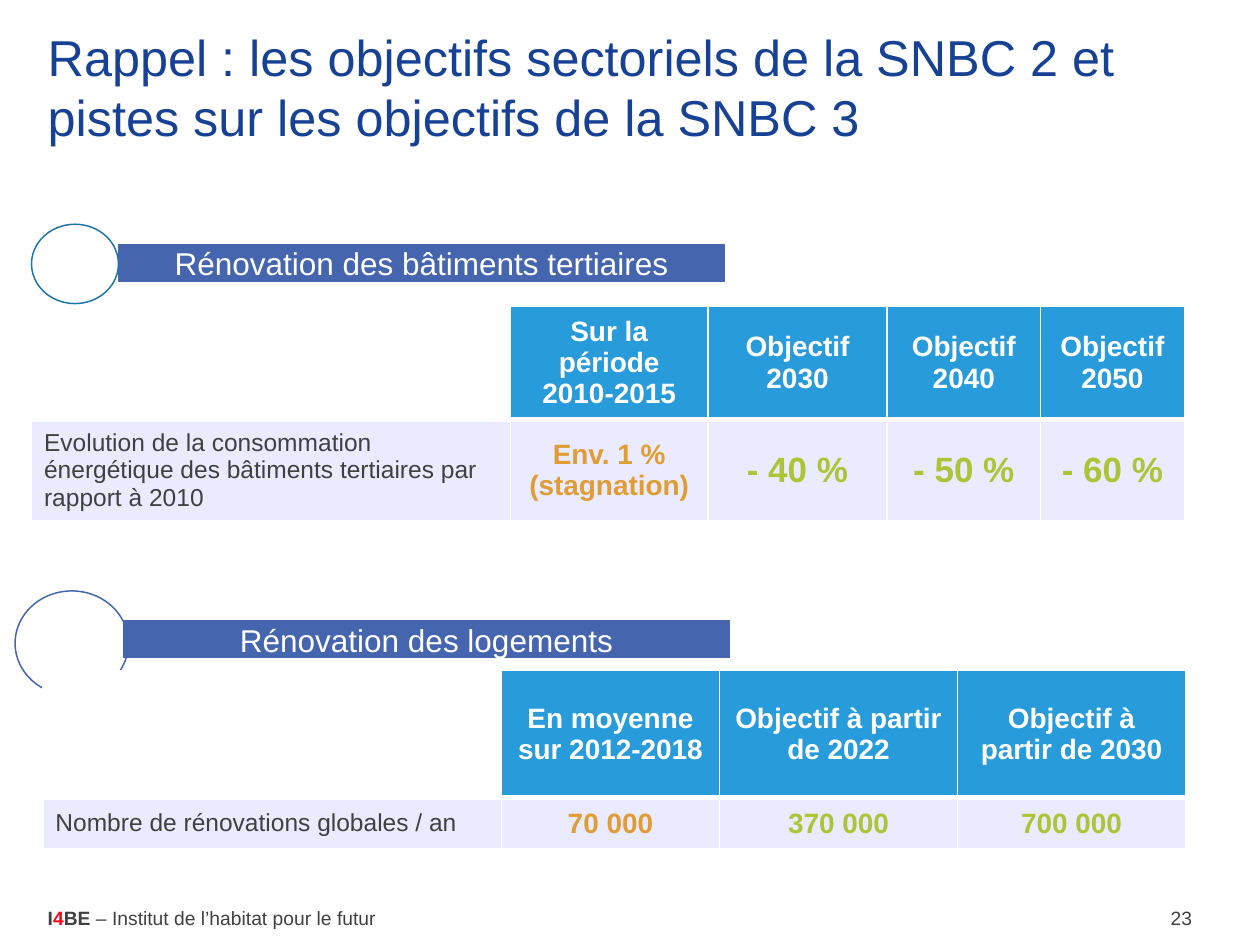
import pptx
import pptx.util
import pptx.dml.color
import pptx.enum.shapes
import pptx.enum.text
import pptx.oxml
from lxml import etree

Inches, Pt = pptx.util.Inches, pptx.util.Pt
ALIGN = pptx.enum.text.PP_ALIGN
ANCHOR = pptx.enum.text.MSO_ANCHOR
SHAPE = pptx.enum.shapes.MSO_SHAPE

# Content
TITLE = "Rappel : les objectifs sectoriels de la SNBC 2 et pistes sur les objectifs de la SNBC 3"
FOOTER = [("I", "404041", True), ("4", "EE0612", True), ("BE ", "404041", True),
          ("– Institut de l’habitat pour le futur", "404041", False)]
PAGE = "23"
GREEN, ORANGE, GREY, WHITE, BLUE = "ACC435", "E09C35", "404041", "FFFFFF", "4565AF"

# Values: text, colour, size
SECTIONS = [
    dict(heading="Rénovation des bâtiments tertiaires", bar=(0.94, 1.94),
         circle=(0.25, 1.78, 0.69, 0.63), outline="1C76A6",
         table=(0.25, 2.43), cols=[3.8, 1.57, 1.42, 1.22, 1.14], rows=[0.84, 0.75],
         header=["Sur la période 2010-2015", "Objectif 2030", "Objectif 2040", "Objectif 2050"],
         label="Evolution de la consommation énergétique des bâtiments tertiaires par rapport à 2010",
         values=[("Env. 1 %\n(stagnation)", ORANGE, 16), ("- 40 %", GREEN, 20),
                 ("- 50 %", GREEN, 20), ("- 60 %", GREEN, 20)]),
    dict(heading="Rénovation des logements", bar=(0.98, 4.93),
         circle=(0.12, 4.69, 0.9, 0.83), outline=BLUE,
         table=(0.34, 5.32), cols=[3.64, 1.73, 1.89, 1.81], rows=[1.01, 0.41],
         header=["En moyenne sur 2012-2018", "Objectif à partir de 2022", "Objectif à partir de 2030"],
         label="Nombre de rénovations globales / an",
         values=[("70 000", ORANGE, 16), ("370 000", GREEN, 16), ("700 000", GREEN, 16)]),
]


def rgb(value):
    return pptx.dml.color.RGBColor.from_string(value)


def write(tf, text, size, color, align=ALIGN.LEFT, bold=False):
    tf.word_wrap = True
    tf.text = text
    for p in tf.paragraphs:
        p.alignment = align
        p.font.name, p.font.size, p.font.bold = "Arial", Pt(size), bold
        p.font.color.rgb = rgb(color)


def text_box(slide, box, anchor=ANCHOR.TOP):
    tf = slide.shapes.add_textbox(*map(Inches, box)).text_frame
    tf.vertical_anchor = anchor
    return tf


def add_shape(slide, kind, box, outline, fill=None):
    sp = slide.shapes.add_shape(kind, *map(Inches, box))
    sp.shadow.inherit = False
    if fill:
        sp.fill.solid()
        sp.fill.fore_color.rgb = rgb(fill)
    else:
        sp.fill.background()
    sp.line.color.rgb = rgb(outline)
    sp.line.width = Pt(0.85)
    return sp


def style_cell(cell, fill, bottom_width, alpha=None):
    cell.vertical_anchor = ANCHOR.MIDDLE
    cell.fill.solid()
    cell.fill.fore_color.rgb = rgb(fill)
    tc_pr = cell._tc.get_or_add_tcPr()
    ns = pptx.oxml.ns.qn
    if alpha:
        color = tc_pr.find(".//" + ns("a:srgbClr"))
        etree.SubElement(color, ns("a:alpha"), val=str(alpha * 1000))
    # Borders come before the fill
    for i, (side, width) in enumerate(zip("LRTB", (1, 1, 1, bottom_width))):
        ln = etree.Element(ns("a:ln" + side), w=str(Pt(width)))
        solid = etree.SubElement(ln, ns("a:solidFill"))
        etree.SubElement(solid, ns("a:srgbClr"), val=WHITE)
        tc_pr.insert(i, ln)


def add_section(slide, sec):
    # Heading bar and circle
    bar = add_shape(slide, SHAPE.RECTANGLE, (*sec["bar"], 4.81, 0.29), BLUE, BLUE)
    bar.text_frame.vertical_anchor = ANCHOR.MIDDLE
    write(bar.text_frame, sec["heading"], 18, WHITE, ALIGN.CENTER)
    add_shape(slide, SHAPE.OVAL, sec["circle"], sec["outline"])

    # Table
    cols, rows = sec["cols"], sec["rows"]
    size = (sum(cols), sum(rows))
    table = slide.shapes.add_table(len(rows), len(cols), *map(Inches, sec["table"] + size)).table
    for col, width in zip(table.columns, cols):
        col.width = Inches(width)
    for row, height in zip(table.rows, rows):
        row.height = Inches(height)
    for c in range(len(cols)):
        style_cell(table.cell(0, c), "289CDB" if c else WHITE, 3)
        style_cell(table.cell(1, c), "CCCCFF", 1, alpha=39)
    write(table.cell(1, 0).text_frame, sec["label"], 14, GREY)
    for c, (head, value) in enumerate(zip(sec["header"], sec["values"]), 1):
        write(table.cell(0, c).text_frame, head, 16, WHITE, ALIGN.CENTER, True)
        text, color, pts = value
        write(table.cell(1, c).text_frame, text, pts, color, ALIGN.CENTER, True)


def main():
    prs = pptx.Presentation()
    prs.slide_width, prs.slide_height = Inches(10), Inches(7.5)
    slide = prs.slides.add_slide(prs.slide_layouts[6])

    # Title
    write(text_box(slide, (0.28, 0.29, 9.45, 0.79), ANCHOR.MIDDLE), TITLE, 28.8, "174195")

    for sec in SECTIONS:
        add_section(slide, sec)

    # Footer and page number
    p = text_box(slide, (0.28, 7.14, 3.39, 0.29)).paragraphs[0]
    p.font.name, p.font.size = "Arial", Pt(11)
    for text, color, bold in FOOTER:
        r = p.add_run()
        r.text, r.font.bold = text, bold
        r.font.color.rgb = rgb(color)
    write(text_box(slide, (8.78, 7.14, 0.78, 0.29), ANCHOR.MIDDLE), PAGE, 11, GREY, ALIGN.RIGHT)

    prs.save("out.pptx")


if __name__ == "__main__":
    main()
